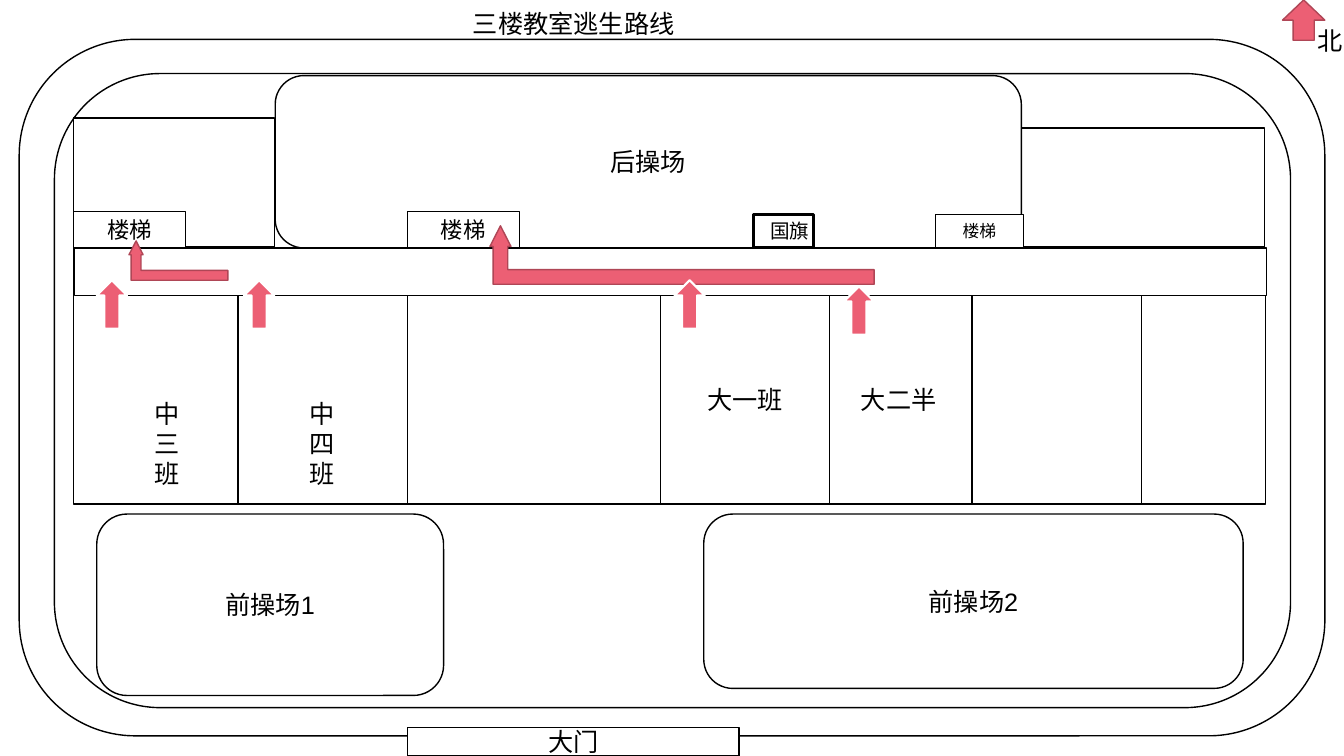
from pptx import Presentation
from pptx.dml.color import RGBColor
from pptx.enum.shapes import MSO_SHAPE
from pptx.enum.text import MSO_ANCHOR, PP_ALIGN
from pptx.util import Inches, Pt

RECT = MSO_SHAPE.RECTANGLE
ROUND = MSO_SHAPE.ROUNDED_RECTANGLE
UP = MSO_SHAPE.UP_ARROW
BENT = MSO_SHAPE.BENT_UP_ARROW
TOP, MIDDLE = MSO_ANCHOR.TOP, MSO_ANCHOR.MIDDLE
LEFT, CENTER, JUSTIFY = PP_ALIGN.LEFT, PP_ALIGN.CENTER, PP_ALIGN.JUSTIFY

FONT = "Arial"
BLACK, WHITE, RED, DARK_RED = "000000", "FFFFFF", "EC5F74", "AF4656"

TITLE = "三楼教室逃生路线"

# Shape, left, top, width, height, text
GROUNDS = [
    (ROUND, 0.19, 0.39, 12.95, 6.91, ""),
    (ROUND, 0.54, 0.73, 12.26, 6.29, ""),
    (RECT, 0.73, 2.46, 11.82, 2.54, ""),
    (RECT, 0.73, 1.17, 1.99, 1.28, ""),
    (RECT, 10.13, 1.27, 2.41, 1.18, ""),
    (ROUND, 2.73, 0.75, 7.4, 1.71, "后操场"),
    (ROUND, 0.96, 5.1, 3.44, 1.8, "前操场1"),
    (ROUND, 6.98, 5.1, 5.35, 1.73, "前操场2"),
    (RECT, 4.04, 7.22, 3.29, 0.28, "大门"),
    (RECT, 0.74, 2.46, 11.82, 0.47, ""),
]
FLAG = (7.47, 2.13, 0.6, 0.33)

ROOM_TOP, ROOM_W, ROOM_H = 2.93, 1.68, 2.07
ROOMS = [(2.36, ""), (6.55, "大一班"), (9.64, "")]

# Left, top, width, height, text size
STAIRS = [
    (0.73, 2.1, 1.11, 0.36, 16),
    (4.04, 2.1, 1.11, 0.36, 16),
    (9.28, 2.13, 0.87, 0.33, 12),
]
ROUTES = [(1.28, 2.39, 0.98, 0.39), (4.86, 2.24, 3.81, 0.58)]
ROUTE_ADJUSTMENTS = (0.25, 0.179, 0.352)
NORTH = (12.72, 0, 0.42, 0.4)
DOOR_W, DOOR_H = 0.3, 0.48
DOORS = [(0.96, 2.78), (2.42, 2.78), (6.69, 2.78), (8.37, 2.84)]

# Text, left, top, width, height, format
LABELS = [
    ("北", 12.97, 0.2, 0.36, 0.4, {"wrap": False}),
    ("大二半", 8.44, 3.76, 1.07, 0.4, {}),
    ("中三班", 1.42, 3.9, 0.48, 0.27, {"align": CENTER, "wrap": False}),
    ("中四班", 2.95, 3.9, 0.48, 0.27, {"align": CENTER, "wrap": False}),
    ("国旗", 7.54, 2.12, 0.68, 0.29, {"size": 14}),
]


def rgb(value):
    return RGBColor.from_string(value)


def box(*lengths):
    return [Inches(n) for n in lengths]


def write(sp, text, size=18, align=LEFT, anchor=TOP, wrap=True):
    tf = sp.text_frame
    tf.word_wrap = wrap
    tf.vertical_anchor = anchor
    p = tf.paragraphs[0]
    p.alignment = align
    r = p.add_run()
    r.text = text
    r.font.name = FONT
    r.font.size = Pt(size)
    r.font.color.rgb = rgb(BLACK)


def add_shape(s, kind, place, text="", size=18, fill=WHITE, line=BLACK, width=1):
    sp = s.shapes.add_shape(kind, *box(*place))
    sp.shadow.inherit = False
    if fill:
        sp.fill.solid()
        sp.fill.fore_color.rgb = rgb(fill)
    else:
        sp.fill.background()
    sp.line.color.rgb = rgb(line)
    sp.line.width = Pt(width)
    if text:
        write(sp, text, size=size, align=CENTER, anchor=MIDDLE)
    return sp


def add_route(s, place):
    """Bent arrow mirrored so that its head is on the left."""
    sp = add_shape(s, BENT, place, fill=RED, line=DARK_RED)
    for i, value in enumerate(ROUTE_ADJUSTMENTS):
        sp.adjustments[i] = value
    sp.element.spPr.xfrm.set("flipH", "1")


def main():
    prs = Presentation()
    prs.slide_width, prs.slide_height = box(13.33, 7.5)
    s = prs.slides.add_slide(prs.slide_layouts[5])

    title = s.shapes.title
    title.left, title.top, title.width, title.height = box(4.59, 0.03, 2.47, 0.4)
    write(title, TITLE, align=JUSTIFY)

    for kind, *place, text in GROUNDS:
        add_shape(s, kind, place, text)
    add_shape(s, RECT, FLAG, fill=None, width=2.25)
    for left, text in ROOMS:
        add_shape(s, RECT, (left, ROOM_TOP, ROOM_W, ROOM_H), text)
    for *place, size in STAIRS:
        add_shape(s, RECT, place, "楼梯", size=size)

    add_shape(s, UP, NORTH, fill=RED, line=DARK_RED)
    for place in ROUTES:
        add_route(s, place)
    for left, top in DOORS:
        add_shape(s, UP, (left, top, DOOR_W, DOOR_H), fill=RED, line=WHITE, width=1.5)

    for text, *place, style in LABELS:
        write(s.shapes.add_textbox(*box(*place)), text, **style)

    prs.save("out.pptx")


if __name__ == "__main__":
    main()
